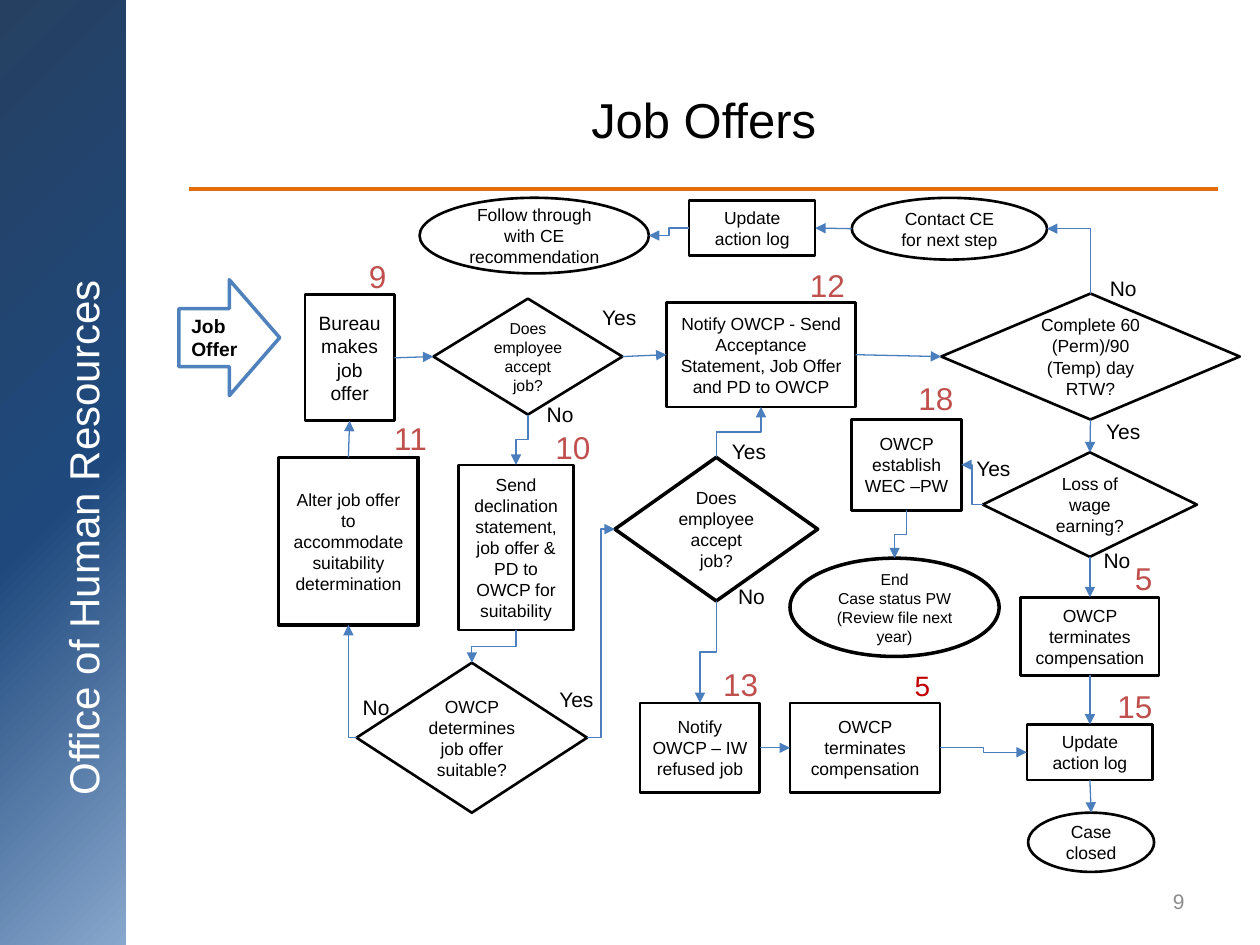
from copy import deepcopy

from lxml.etree import SubElement
from pptx import Presentation
from pptx.dml.color import RGBColor
from pptx.enum.shapes import MSO_CONNECTOR, MSO_SHAPE
from pptx.enum.text import MSO_ANCHOR, PP_ALIGN
from pptx.oxml.ns import qn
from pptx.util import Inches, Pt

BLACK = RGBColor(0, 0, 0)
WHITE = RGBColor(255, 255, 255)
GRAY = RGBColor(0x8C, 0x8C, 0x8C)
ORANGE = RGBColor(0xE4, 0x6C, 0x0A)
BLUE = RGBColor(0x4F, 0x81, 0xBD)
LINK_BLUE = RGBColor(0x4B, 0x7E, 0xBC)
STEP_RED = RGBColor(0xC0, 0x50, 0x4D)
DARK_RED = RGBColor(0xC0, 0, 0)
WAVE_COLORS = [RGBColor(0x25, 0x40, 0x61), RGBColor(0x1F, 0x49, 0x7D), RGBColor(0x95, 0xB3, 0xD7)]

RECT, DIAMOND, OVAL = MSO_SHAPE.RECTANGLE, MSO_SHAPE.DIAMOND, MSO_SHAPE.OVAL
DECISION = MSO_SHAPE.FLOWCHART_DECISION
TOP, LEFT, BOTTOM, RIGHT = range(4)

STEPS = {
    "offer": (RECT, 2.42, 2.34, 0.71, 1, "Bureau makes job offer", {"size": 11}),
    "accept": (DIAMOND, 3.44, 2.37, 1.5, 0.92, "Does employee accept job?", {"size": 9}),
    "decline": (RECT, 3.64, 3.69, 0.91, 1.31,
                "Send declination statement, job offer & PD to OWCP for suitability", {}),
    "suitable": (DIAMOND, 2.83, 5.26, 1.83, 1.19, "OWCP determines job offer suitable?", {}),
    "alter": (RECT, 2.21, 3.63, 1.11, 1.33,
              "Alter job offer to accommodate suitability determination", {"weight": 2}),
    "refused": (RECT, 5.08, 5.58, 0.95, 0.71, "Notify OWCP – IW refused job", {"inset": 0.08}),
    "wage loss": (DIAMOND, 7.8, 3.59, 1.7, 0.83, "Loss of wage earning?", {}),
    "accepted": (RECT, 5.29, 2.4, 1.5, 0.83,
                 "Notify OWCP - Send Acceptance Statement, Job Offer and PD to OWCP", {}),
    "return": (DIAMOND, 7.47, 2.33, 2.37, 1, "Complete 60 (Perm)/90 (Temp) day RTW?", {}),
    "establish": (RECT, 6.76, 3.33, 0.87, 0.72, "OWCP establish WEC –PW", {"inset": 0.08}),
    "terminate refusal": (RECT, 6.27, 5.58, 1.19, 0.71, "OWCP terminates compensation", {}),
    "closed": (OVAL, 8.16, 6.45, 1, 0.47, "Case closed", {}),
    "end": (OVAL, 6.27, 4.43, 1.66, 0.78,
            "End\nCase status PW (Review file next year)", {"size": 9, "weight": 2}),
    "log closing": (RECT, 8.15, 5.75, 1, 0.44, "Update action log", {"inset": 0.12}),
    "terminate": (RECT, 8.1, 4.74, 1.1, 0.62, "OWCP terminates compensation", {}),
    "contact": (OVAL, 6.76, 1.57, 1.55, 0.49, "Contact CE for next step", {"inset": 0.12}),
    "accept again": (DECISION, 4.88, 3.63, 1.61, 1.14, "Does employee accept job?", {"weight": 2}),
    "log contact": (RECT, 5.47, 1.59, 1, 0.44, "Update action log", {"inset": 0.12}),
    "follow": (OVAL, 3.33, 1.57, 1.82, 0.6, "Follow through with CE recommendation", {}),
}

STRAIGHT_LINKS = [
    ("log closing", BOTTOM, "closed", TOP),
    ("offer", RIGHT, "accept", LEFT),
    ("terminate", BOTTOM, "log closing", TOP),
    ("accept", RIGHT, "accepted", LEFT),
    ("accepted", RIGHT, "return", LEFT),
    ("return", BOTTOM, "wage loss", TOP),
    ("alter", TOP, "offer", BOTTOM),
    ("refused", RIGHT, "terminate refusal", LEFT),
    ("wage loss", BOTTOM, "terminate", TOP),
    ("contact", LEFT, "log contact", RIGHT),
]
ELBOW_LINKS = [
    ("suitable", LEFT, "alter", BOTTOM),
    ("suitable", RIGHT, "accept again", LEFT),
    ("accept again", TOP, "accepted", BOTTOM),
    ("terminate refusal", RIGHT, "log closing", LEFT),
    ("decline", BOTTOM, "suitable", TOP),
    ("accept", BOTTOM, "decline", TOP),
    ("wage loss", LEFT, "establish", RIGHT),
    ("establish", BOTTOM, "end", TOP),
    ("return", TOP, "contact", RIGHT),
    ("log contact", LEFT, "follow", RIGHT),
    ("accept again", BOTTOM, "refused", TOP),
]

ANSWERS = {
    "Yes": [(4.68, 2.37), (4.34, 5.4), (7.65, 3.57), (5.71, 3.43), (8.68, 3.27)],
    "No": [(4.24, 3.14), (8.66, 4.3), (2.78, 5.46), (5.76, 4.58), (8.71, 2.14)],
}
ANSWER_WIDTHS = {"Yes": 0.48, "No": 0.42}
STEP_NUMBERS = [("9", 2.83, 1.99), ("11", 3.03, 3.28), ("18", 7.19, 2.96), ("10", 4.31, 3.35),
                ("13", 5.64, 5.23), ("12", 6.33, 2.06), ("5", 8.91, 4.39), ("15", 8.77, 5.4)]

prs = Presentation()
prs.slide_width, prs.slide_height = Inches(10), Inches(7.5)
slide = prs.slides.add_slide(prs.slide_layouts[6])
shapes = slide.shapes


def write(holder, text, size=10, color=BLACK, bold=False, align=PP_ALIGN.CENTER,
          anchor=MSO_ANCHOR.MIDDLE, wrap=True, inset=0.1):
    frame = holder.text_frame
    frame.word_wrap = wrap
    frame.vertical_anchor = anchor
    frame.margin_left = frame.margin_right = Inches(inset)
    frame.text = text
    for paragraph in frame.paragraphs:
        paragraph.alignment = align
        font = paragraph.font
        font.name, font.size, font.bold = "Arial", Pt(size), bold
        font.color.rgb = color


def add_text(x, y, w, h, text, **style):
    box = shapes.add_textbox(*map(Inches, (x, y, w, h)))
    write(box, text, **style)
    return box


def add_label(x, y, w, h, text, **style):
    add_text(x, y, w, h, text, align=PP_ALIGN.LEFT, anchor=MSO_ANCHOR.TOP, wrap=False, **style)


def add_step(kind, x, y, w, h, text, weight=1.5, outline=BLACK, **style):
    step = shapes.add_shape(kind, *map(Inches, (x, y, w, h)))
    step.shadow.inherit = False
    step.fill.solid()
    step.fill.fore_color.rgb = WHITE
    step.line.color.rgb = outline
    step.line.width = Pt(weight)
    write(step, text, **style)
    return step


def add_line(kind, start, end, color, weight, arrow=True):
    line = shapes.add_connector(kind, *map(Inches, (*start, *end)))
    line.line.color.rgb = color
    line.line.width = Pt(weight)
    if arrow:
        SubElement(line.get_or_add_ln(), qn("a:tailEnd"), type="triangle")
    SubElement(line.element.spPr, qn("a:effectLst"))
    return line


def side_point(name, side):
    x, y, w, h = STEPS[name][1:5]
    across, down = [(0.5, 0), (0, 0.5), (0.5, 1), (1, 0.5)][side]
    return x + w * across, y + h * down


def can_join(name, side):
    return STEPS[name][0] != OVAL or side == TOP


def add_elbow(start, start_side, end, end_side):
    (x1, y1), (x2, y2) = side_point(start, start_side), side_point(end, end_side)
    vertical_first = start_side in (TOP, BOTTOM)
    begin, finish = (x1, y1), (x2, y2)
    if vertical_first:
        middle_x, middle_y = (x1 + x2) / 2, (y1 + y2) / 2
        half_w, half_h = (x2 - x1) / 2, (y2 - y1) / 2
        begin = middle_x - half_h, middle_y + half_w
        finish = middle_x + half_h, middle_y - half_w
    elbow = add_line(MSO_CONNECTOR.ELBOW, begin, finish, LINK_BLUE, 0.75)
    properties = elbow.element.spPr
    if vertical_first:
        properties.find(qn("a:xfrm")).set("rot", "5400000")
    if start_side % 2 != end_side % 2:
        properties.find(qn("a:prstGeom")).set("prst", "bentConnector2")


def add_wave():
    curve = [(1.11, 0), (1.84, 2.51), (0.72, 4.46), (1.33, 7.5)]
    count = 60
    edge = []
    for i in range(count + 1):
        t = i / count
        weights = ((1 - t) ** 3, 3 * t * (1 - t) ** 2, 3 * t * t * (1 - t), t ** 3)
        edge.append(tuple(sum(k * p[axis] for k, p in zip(weights, curve)) for axis in (0, 1)))
    builder = shapes.build_freeform(0, 0, scale=Inches(1))
    builder.add_line_segments(edge + [(0, 7.5)], close=True)
    wave = builder.convert_to_shape()
    wave.shadow.inherit = False
    wave.line.fill.background()
    wave.fill.gradient()
    wave.fill.gradient_angle = 315
    stops = wave.element.spPr.find(qn("a:gradFill")).find(qn("a:gsLst"))
    stops.insert(1, deepcopy(stops[0]))
    for i, (stop, color) in enumerate(zip(wave.fill.gradient_stops, WAVE_COLORS)):
        stop.position = i / 2
        stop.color.rgb = color


add_wave()
department = add_text(-2.08, 3.99, 5.47, 0.56, "Office of Human Resources", size=24, color=WHITE)
department.rotation = 270
add_line(MSO_CONNECTOR.STRAIGHT, (1.5, 1.5), (9.67, 1.5), ORANGE, 2.25, arrow=False)
add_text(1.5, 0.32, 8.17, 1.25, "Job Offers", size=28)
add_text(7.17, 6.95, 2.33, 0.4, "9", size=12, color=GRAY, align=PP_ALIGN.RIGHT)

add_step(MSO_SHAPE.RIGHT_ARROW, 1.42, 2.22, 0.8, 0.92, "Job Offer", weight=2, outline=BLUE,
         size=11, bold=True, align=PP_ALIGN.LEFT)
steps = {name: add_step(*place, **style) for name, (*place, style) in STEPS.items()}

for start, start_side, end, end_side in STRAIGHT_LINKS:
    link = add_line(MSO_CONNECTOR.STRAIGHT, side_point(start, start_side),
                    side_point(end, end_side), LINK_BLUE, 0.75)
    if can_join(start, start_side):
        link.begin_connect(steps[start], start_side)
    if can_join(end, end_side):
        link.end_connect(steps[end], end_side)
for elbow_link in ELBOW_LINKS:
    add_elbow(*elbow_link)

for answer, places in ANSWERS.items():
    for x, y in places:
        add_label(x, y, ANSWER_WIDTHS[answer], 0.3, answer, size=12)
for number, x, y in STEP_NUMBERS:
    add_label(x, y, 0.2 + 0.14 * len(number), 0.4, number, size=18, color=STEP_RED)
add_label(7.16, 5.26, 0.32, 0.37, "5", size=16, color=DARK_RED)

prs.save("out.pptx")
